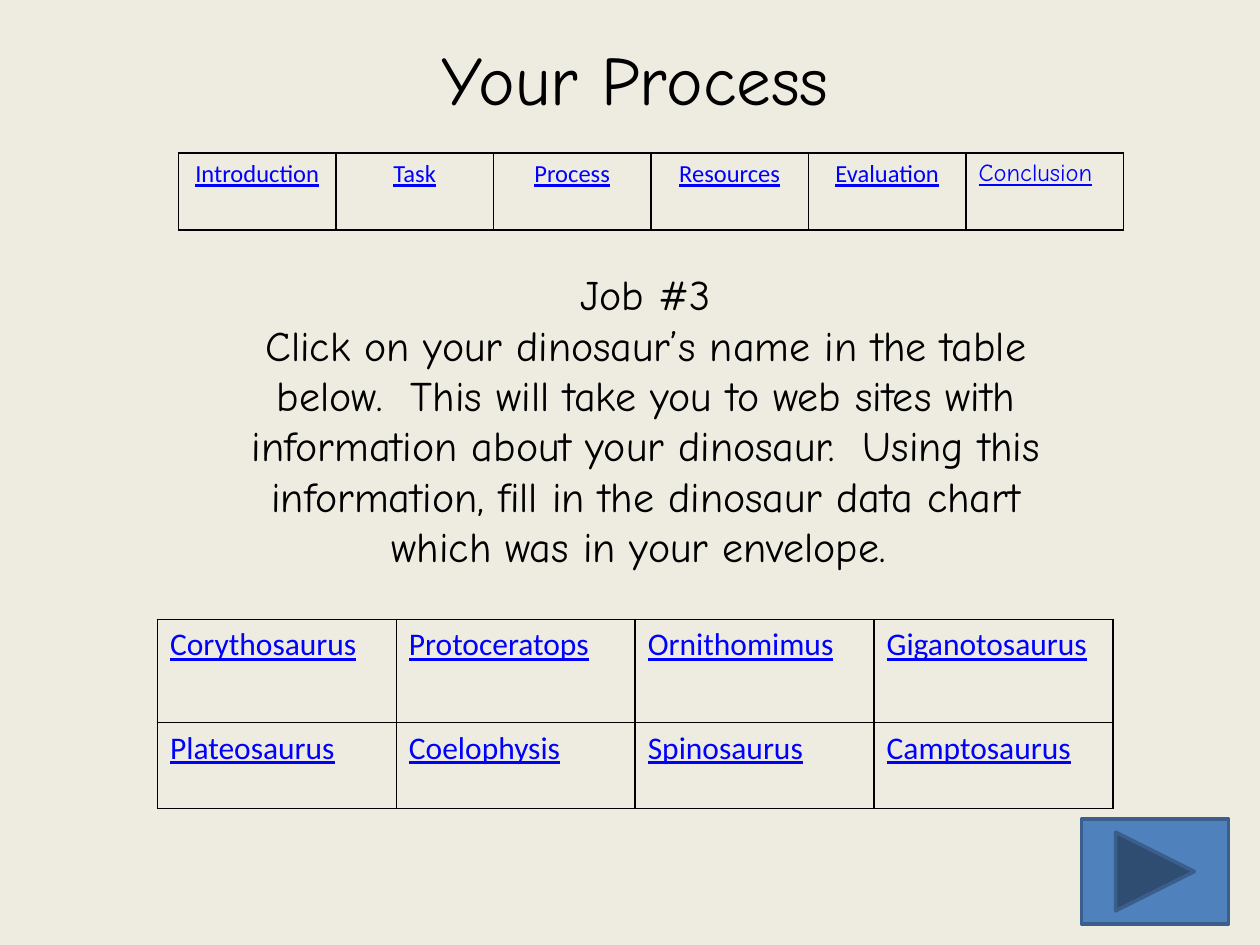
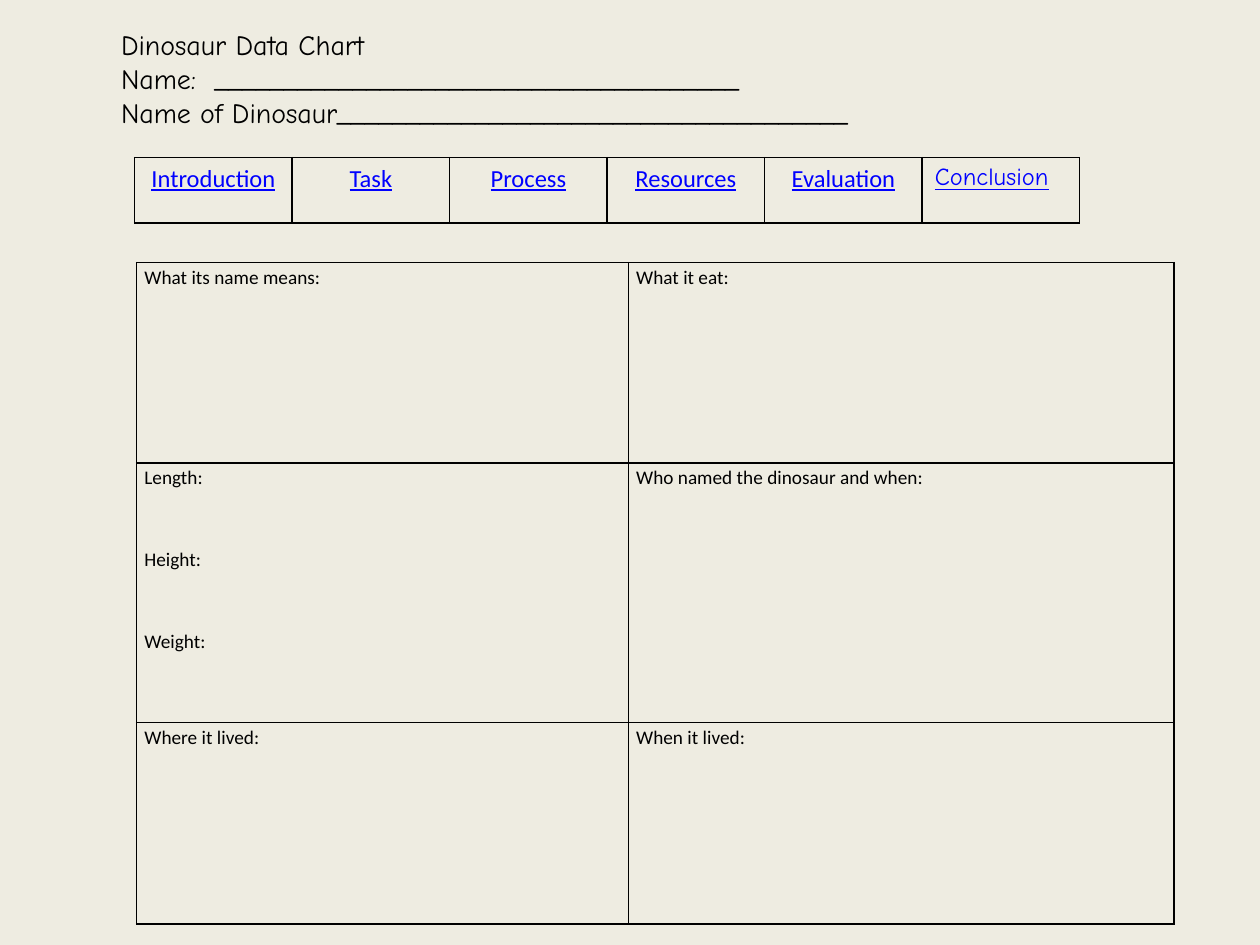
from lxml import etree
from pptx import Presentation
from pptx.dml.color import RGBColor
from pptx.enum.shapes import MSO_SHAPE
from pptx.enum.text import MSO_ANCHOR, MSO_AUTO_SIZE, PP_ALIGN
from pptx.oxml.ns import qn
from pptx.util import Pt

LEFT, CENTER = PP_ALIGN.LEFT, PP_ALIGN.CENTER
MIDDLE, TOP = MSO_ANCHOR.MIDDLE, MSO_ANCHOR.TOP
NO_AUTOFIT = MSO_AUTO_SIZE.NONE
NEXT_BUTTON = MSO_SHAPE.ACTION_BUTTON_FORWARD_OR_NEXT

COLORS = {
    "background": "EEECE1",
    "text": "000000",
    "link": "0000FF",
    "border": "000000",
    "button": "4F81BD",
    "button_line": "3A5F8C",
}
HEADING_FONT, TABLE_FONT = "Comic Neue", "Calibri"
TITLE_ONLY = 5

NAVIGATION = ["Introduction", "Task", "Process", "Resources", "Evaluation", "Conclusion"]
DINOSAURS = [
    ["Corythosaurus", "Protoceratops", "Ornithomimus", "Giganotosaurus"],
    ["Plateosaurus", "Coelophysis", "Spinosaurus", "Camptosaurus"],
]
DATA_CHART = [
    [["What its name means:"], ["What it eat:"]],
    [["Length:", "Height:", "Weight:"], ["Who named the dinosaur and when:"]],
    [["Where it lived:"], ["When it lived:"]],
]


def color(name):
    return RGBColor.from_string(COLORS[name])


def write(text_frame, lines, font, size, color_name="text", align=LEFT, underline=None):
    """Fill a text frame with one formatted paragraph per line."""
    text_frame.word_wrap = True
    text_frame.text = "\n".join(lines)
    for paragraph in text_frame.paragraphs:
        paragraph.alignment = align
        paragraph.font.name = font
        paragraph.font.size = Pt(size)
        paragraph.font.underline = underline
        paragraph.font.color.rgb = color(color_name)


def add_title(slide, box, lines, size, align):
    title = slide.shapes.title
    title.left, title.top, title.width, title.height = map(Pt, box)
    title.text_frame.auto_size = NO_AUTOFIT
    title.text_frame.vertical_anchor = MIDDLE
    write(title.text_frame, lines, HEADING_FONT, size, align=align)


def add_instructions(slide, box, lines):
    text_box = slide.shapes.add_textbox(*map(Pt, box))
    text_box.text_frame.vertical_anchor = TOP
    write(text_box.text_frame, lines, HEADING_FONT, 24, align=CENTER)


def add_borders(cell):
    properties = cell._tc.get_or_add_tcPr()
    for index, side in enumerate(("a:lnL", "a:lnR", "a:lnT", "a:lnB")):
        line = etree.Element(qn(side), w=str(Pt(1)))
        fill = etree.SubElement(line, qn("a:solidFill"))
        etree.SubElement(fill, qn("a:srgbClr"), val=COLORS["border"])
        properties.insert(index, line)


def add_grid(slide, left, top, column_widths, row_heights):
    """Add an unfilled table with thin borders."""
    box = (left, top, sum(column_widths), sum(row_heights))
    table = slide.shapes.add_table(len(row_heights), len(column_widths), *map(Pt, box)).table
    table.first_row = table.horz_banding = False
    for column, width in zip(table.columns, column_widths):
        column.width = Pt(width)
    for row, height in zip(table.rows, row_heights):
        row.height = Pt(height)
    for cell in table.iter_cells():
        cell.fill.background()
        add_borders(cell)
    return table


def add_navigation(slide, left, top, height):
    table = add_grid(slide, left, top, [90] * len(NAVIGATION), [height])
    for cell, label in zip(table.iter_cells(), NAVIGATION):
        is_last = label == NAVIGATION[-1]
        write(cell.text_frame, [label], HEADING_FONT if is_last else TABLE_FONT, 14,
              "link", LEFT if is_last else CENTER, underline=True)


def add_dinosaur_links(slide, left, top):
    table = add_grid(slide, left, top, [136.5] * 4, [59, 49])
    for row, names in zip(table.rows, DINOSAURS):
        for cell, name in zip(row.cells, names):
            write(cell.text_frame, [name], TABLE_FONT, 18, "link", underline=True)


def add_data_chart(slide, left, top):
    table = add_grid(slide, left, top, [281, 312], [114.5, 148.5, 115])
    for row, prompts in zip(table.rows, DATA_CHART):
        for cell, lines in zip(row.cells, prompts):
            cell.margin_left = cell.margin_right = Pt(4.5)
            cell.margin_top = cell.margin_bottom = 0
            write(cell.text_frame, lines, TABLE_FONT, 11)
            for index, paragraph in enumerate(cell.text_frame.paragraphs):
                paragraph.line_spacing = 1.15
                # Writing room between prompts that share a cell
                paragraph.space_before = Pt(31 if index else 0)


def add_next_button(slide, box):
    button = slide.shapes.add_shape(NEXT_BUTTON, *map(Pt, box))
    button.shadow.inherit = False
    button.fill.solid()
    button.fill.fore_color.rgb = color("button")
    button.line.color.rgb = color("button_line")
    button.line.width = Pt(2)


def build_process_slide(slide):
    add_title(slide, (78, 20.5, 570, 48), ["Your Process"], 39.6, CENTER)
    add_navigation(slide, 102, 87.5, 44)
    add_dinosaur_links(slide, 90, 354)
    add_instructions(slide, (120, 150, 498, 181.5), [
        "Job #3",
        "Click on your dinosaur’s name in the table below.  This will take you to web sites "
        "with information about your dinosaur.  Using this information, fill in the "
        "dinosaur data chart which was in your envelope. ",
    ])
    add_next_button(slide, (618, 468, 84, 60))


def build_data_chart_slide(slide):
    add_data_chart(slide, 78, 150)
    add_title(slide, (62, 12, 570, 65.5), [
        "Dinosaur Data Chart",
        "Name:  " + "_" * 38,
        "Name of Dinosaur" + "_" * 37,
    ], 16, LEFT)
    add_navigation(slide, 77, 90, 37.5)


def main():
    presentation = Presentation()
    presentation.slide_width, presentation.slide_height = Pt(720), Pt(540)

    # Shared background
    background = presentation.slide_master.background.fill
    background.solid()
    background.fore_color.rgb = color("background")

    for build in (build_process_slide, build_data_chart_slide):
        build(presentation.slides.add_slide(presentation.slide_layouts[TITLE_ONLY]))
    presentation.save("out.pptx")


if __name__ == "__main__":
    main()
